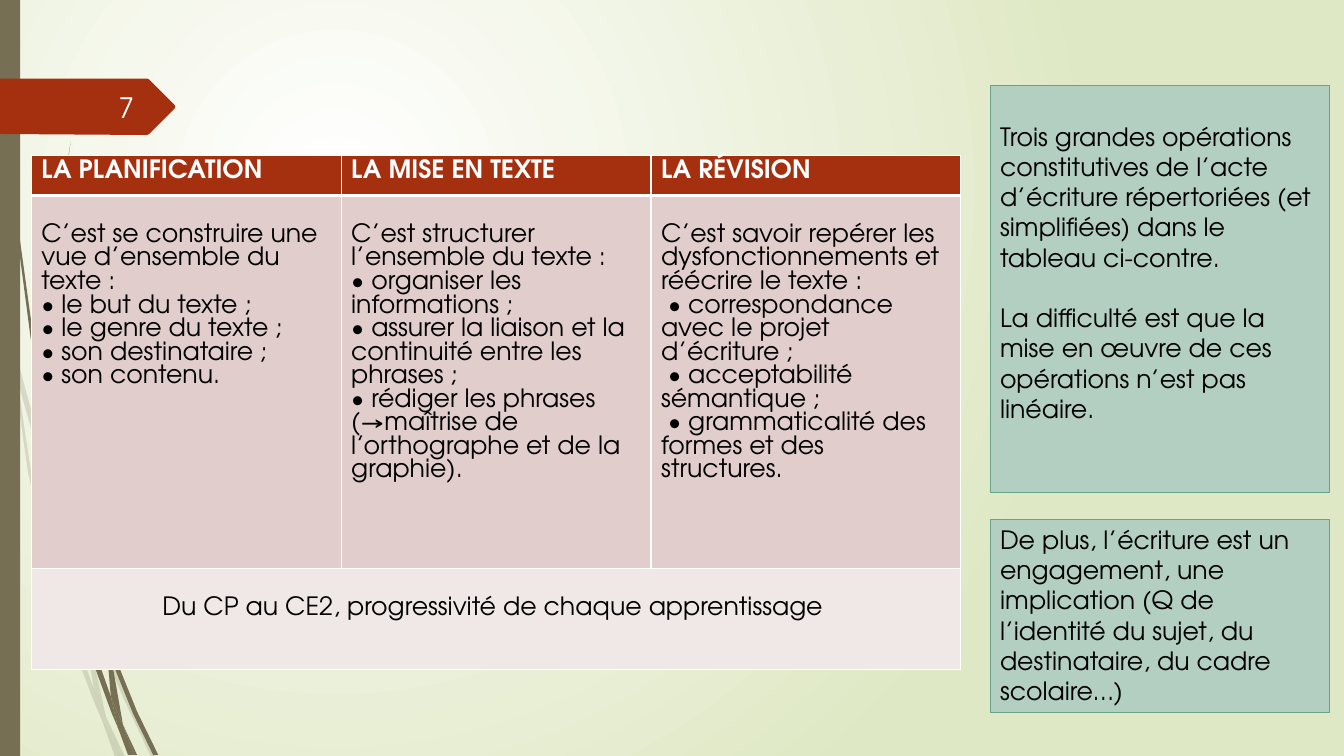
import dataclasses
import pptx
import pptx.dml.color
import pptx.enum.shapes
import pptx.enum.text
import pptx.oxml
import pptx.oxml.ns
import pptx.util
from pptx.util import Inches

# Content
HEADINGS = ["LA PLANIFICATION", "LA MISE EN TEXTE", "LA RÉVISION"]
DETAILS = [
    ["C’est se construire une vue d’ensemble du texte :", "• le but du texte ;",
     "• le genre du texte ;", "• son destinataire ;", "• son contenu."],
    ["C’est structurer l’ensemble du texte :", "• organiser les informations ;",
     "• assurer la liaison et la continuité entre les phrases ;",
     "• rédiger les phrases (→maîtrise de l’orthographe et de la graphie)."],
    ["C’est savoir repérer les dysfonctionnements et réécrire le texte :",
     " • correspondance avec le projet d’écriture ;", " • acceptabilité sémantique ;",
     " • grammaticalité des formes et des structures."],
]
PROGRESSION = "Du CP au CE2, progressivité de chaque apprentissage "
NOTES = [  # top, height, top inset, paragraphs
    (0.85, 4.04, 0.35,
     ["Trois grandes opérations constitutives de l’acte d’écriture répertoriées (et simplifiées) "
      "dans le tableau ci-contre.",
      "La difficulté est que la mise en œuvre de ces opérations n’est pas linéaire."]),
    (5.15, 1.92, 0.05,
     ["De plus, l’écriture est un engagement, une implication (Q de l’identité du sujet, "
      "du destinataire, du cadre scolaire…)"]),
]
PAGE_NUMBER = "7"

# Outlines of the grass blades behind the table, and of the number tag
PALE_BLADES = [
    [(0, 2.82), (0.09, 3.22), (0.11, 3.5), (0.1, 3.44), (0, 2.99)],
    [(0.14, 3.45), (0.62, 5.2), (0.85, 5.86), (0.84, 5.99), (0.58, 5.22), (0.17, 3.76)],
    [(0.88, 5.96), (0.92, 6.07), (1.27, 6.92), (1.55, 7.51), (1.5, 7.51), (1.23, 6.94),
     (0.88, 6.1)],
    [(1.05, 7.11), (1.24, 7.51), (1.19, 7.51)],
    [(0.11, 3.5), (0.17, 3.76), (0.31, 4.69), (0.7, 6.19), (0.93, 6.83), (1.01, 7.14),
     (0.92, 6.93), (0.65, 6.21), (0.28, 4.7)],
    [(0.84, 5.99), (0.88, 6.1), (0.91, 6.46), (1.05, 7.11), (0.93, 6.83), (0.87, 6.46)],
    [(3.12, 1.53), (2.68, 1.98), (2.29, 2.45), (1.6, 3.49), (1.1, 4.62), (0.88, 5.84),
     (0.88, 5.96), (0.85, 5.84), (1.07, 4.61), (1.58, 3.48), (2.28, 2.44), (2.68, 1.97)],
    [(1.01, 7.14), (1.19, 7.51), (1.14, 7.51)],
    [(0.85, 5.86), (0.88, 5.96), (0.88, 6.1), (0.84, 5.99)],
    [(0.93, 6.83), (1.05, 7.11), (1.19, 7.51), (1.01, 7.14)],
]
DARK_BLADES = [
    [(0.03, 0), (0.04, 0), (0.05, 0.48), (0.08, 1.09), (0.19, 2.32), (0.36, 3.55),
     (0.55, 4.53), (0.57, 4.81), (0.33, 3.55), (0.17, 2.33), (0.07, 1.1)],
    [(0.6, 4.72), (0.93, 5.9), (1.06, 6.31), (1.06, 6.45), (0.88, 5.92), (0.64, 5.05)],
    [(1.1, 6.41), (1.13, 6.49), (1.36, 7.06), (1.57, 7.49), (1.52, 7.49), (1.32, 7.08),
     (1.11, 6.56)],
    [(0.57, 4.77), (0.64, 5.05), (0.72, 5.56), (0.98, 6.57), (1.1, 6.91), (1.17, 7.22),
     (1.11, 7.08), (0.93, 6.59), (0.68, 5.57)],
    [(0.7, 1.41), (0.63, 1.93), (0.58, 2.45), (0.54, 3.49), (0.58, 4.53), (0.6, 4.72),
     (0.55, 4.49), (0.52, 3.49), (0.56, 2.45), (0.62, 1.93)],
    [(1.22, 7.19), (1.36, 7.49), (1.33, 7.49)],
    [(0.55, 4.49), (0.6, 4.72), (0.64, 5.05), (0.57, 4.77)],
    [(2.6, 3.44), (2.31, 3.74), (2.05, 4.06), (1.58, 4.76), (1.25, 5.52), (1.11, 6.33),
     (1.1, 6.41), (1.06, 6.31), (1.22, 5.51), (1.56, 4.74), (2.04, 4.05), (2.31, 3.73)],
    [(1.17, 7.22), (1.31, 7.49), (1.27, 7.49)],
    [(1.06, 6.45), (1.11, 6.56), (1.22, 7.19), (1.1, 6.91)],
    [(1.06, 6.31), (1.1, 6.41), (1.11, 6.56), (1.06, 6.45)],
    [(1.1, 6.91), (1.22, 7.19), (1.33, 7.49), (1.3, 7.49), (1.17, 7.22)],
]
TAG = [(0, 0.78), (1.46, 0.78), (1.48, 0.79), (1.73, 1.04), (1.74, 1.06), (1.73, 1.08),
       (1.48, 1.33), (1.46, 1.34), (0, 1.33)]


@dataclasses.dataclass(frozen=True)
class Theme:
    font: str = "TeX Gyre Adventor"
    body: float = 18
    number: float = 20
    ink: str = "000000"
    white: str = "FFFFFF"
    mist: str = "DFE8C4"
    earth: str = "766F54"
    rust: str = "A53010"
    sage: str = "B3CFC2"
    sage_line: str = "65A48B"
    rose: str = "E1CDCC"
    pale_rose: str = "F0E8E7"


THEME = Theme()
ALIGN = pptx.enum.text.PP_ALIGN
NAMESPACE = pptx.oxml.ns.nsdecls("a")


def color(code):
    return pptx.dml.color.RGBColor.from_string(code)


def paint(item, code):
    item.fill.solid()
    item.fill.fore_color.rgb = color(code)


def write(frame, lines, size=THEME.body, ink=THEME.ink, bold=False, align=ALIGN.LEFT):
    frame.word_wrap = True
    for index, line in enumerate(lines):
        para = frame.paragraphs[0] if index == 0 else frame.add_paragraph()
        para.alignment = align
        span = para.add_run()
        span.text = line
        look = {"name": THEME.font, "size": pptx.util.Pt(size), "bold": bold}
        for name, value in look.items():
            setattr(span.font, name, value)
        span.font.color.rgb = color(ink)


def add_outline(page, points, code, opacity=100):
    corners = [(Inches(x), Inches(y)) for x, y in points]
    builder = page.shapes.build_freeform(*corners[0], scale=1.0)
    builder.add_line_segments(corners[1:], close=True)
    shape = builder.convert_to_shape()
    shape.shadow.inherit = False
    paint(shape, code)
    shape.line.fill.background()
    if opacity < 100:
        tint = shape.fill._xPr.find(".//" + pptx.oxml.ns.qn("a:srgbClr"))
        tint.append(pptx.oxml.parse_xml(f'<a:alpha {NAMESPACE} val="{opacity * 1000}"/>'))


def add_box(page, left, top, width, height, code):
    kind = pptx.enum.shapes.MSO_SHAPE.RECTANGLE
    box = page.shapes.add_shape(kind, *map(Inches, (left, top, width, height)))
    box.shadow.inherit = False
    paint(box, code)
    box.line.fill.background()
    return box


def set_borders(cell, top=1, bottom=1):
    widths = {"lnL": 1, "lnR": 1, "lnT": top, "lnB": bottom}
    for index, (side, width) in enumerate(widths.items()):
        cell._tc.get_or_add_tcPr().insert(index, pptx.oxml.parse_xml(
            f'<a:{side} {NAMESPACE} w="{width * 12700}"><a:solidFill>'
            f'<a:srgbClr val="{THEME.white}"/></a:solidFill></a:{side}>'))


def add_backdrop(page):
    fill = page.background.fill
    fill.gradient()
    for stop, code in zip(fill.gradient_stops, (THEME.white, THEME.mist)):
        stop.color.rgb = color(code)
    gradient = page.background._cSld.find(".//" + pptx.oxml.ns.qn("a:gradFill"))
    gradient.remove(gradient.find(pptx.oxml.ns.qn("a:lin")))
    gradient.append(pptx.oxml.parse_xml(
        f'<a:path {NAMESPACE} path="circle"><a:fillToRect '
        'l="50000" t="50000" r="100000" b="100000"/></a:path>'))
    for blades, opacity in ((PALE_BLADES, 20), (DARK_BLADES, 100)):
        for blade in blades:
            add_outline(page, blade, THEME.earth, opacity)
    add_box(page, 0, 0, 0.2, 7.5, THEME.earth)
    add_outline(page, TAG, THEME.rust)


def add_operations(page):
    # Height, fill, borders and top inset of each row
    rows = [(0.4, THEME.rust, {"bottom": 3}, 0.05), (3.7, THEME.rose, {"top": 3}, 0.28),
            (1.0, THEME.pale_rose, {}, 0.28)]
    place = map(Inches, (0.31, 1.54, 9.22, 5.1))
    table = page.shapes.add_table(len(rows), len(HEADINGS), *place).table
    for row, (height, fill, edges, inset) in zip(table.rows, rows):
        row.height = Inches(height)
        for cell in row.cells:
            paint(cell, fill)
            set_borders(cell, **edges)
            cell.margin_top = Inches(inset)
    for column, (heading, details) in enumerate(zip(HEADINGS, DETAILS)):
        write(table.cell(0, column).text_frame, [heading], ink=THEME.white, bold=True)
        write(table.cell(1, column).text_frame, details)
    footer = table.cell(2, 0)
    footer.merge(table.cell(2, len(HEADINGS) - 1))
    write(footer.text_frame, [PROGRESSION], align=ALIGN.CENTER)


def add_notes(page):
    for top, height, inset, lines in NOTES:
        box = add_box(page, 9.82, top, 3.37, height, THEME.sage)
        box.line.color.rgb = color(THEME.sage_line)
        box.line.width = pptx.util.Pt(0.75)
        box.text_frame.vertical_anchor = pptx.enum.text.MSO_ANCHOR.TOP
        box.text_frame.margin_top = Inches(inset)
        write(box.text_frame, lines)
        for para in box.text_frame.paragraphs[1:]:
            para.space_before = pptx.util.Pt(21.6)


def main():
    deck = pptx.Presentation()
    deck.slide_width, deck.slide_height = Inches(13.33), Inches(7.5)
    page = deck.slides.add_slide(deck.slide_layouts[6])
    add_backdrop(page)
    add_operations(page)
    add_notes(page)
    # Page number on the tag
    box = page.shapes.add_textbox(*map(Inches, (0.58, 0.86, 0.85, 0.4)))
    box.text_frame.vertical_anchor = pptx.enum.text.MSO_ANCHOR.MIDDLE
    write(box.text_frame, [PAGE_NUMBER], THEME.number, THEME.white, align=ALIGN.RIGHT)
    deck.save("out.pptx")


if __name__ == "__main__":
    main()
